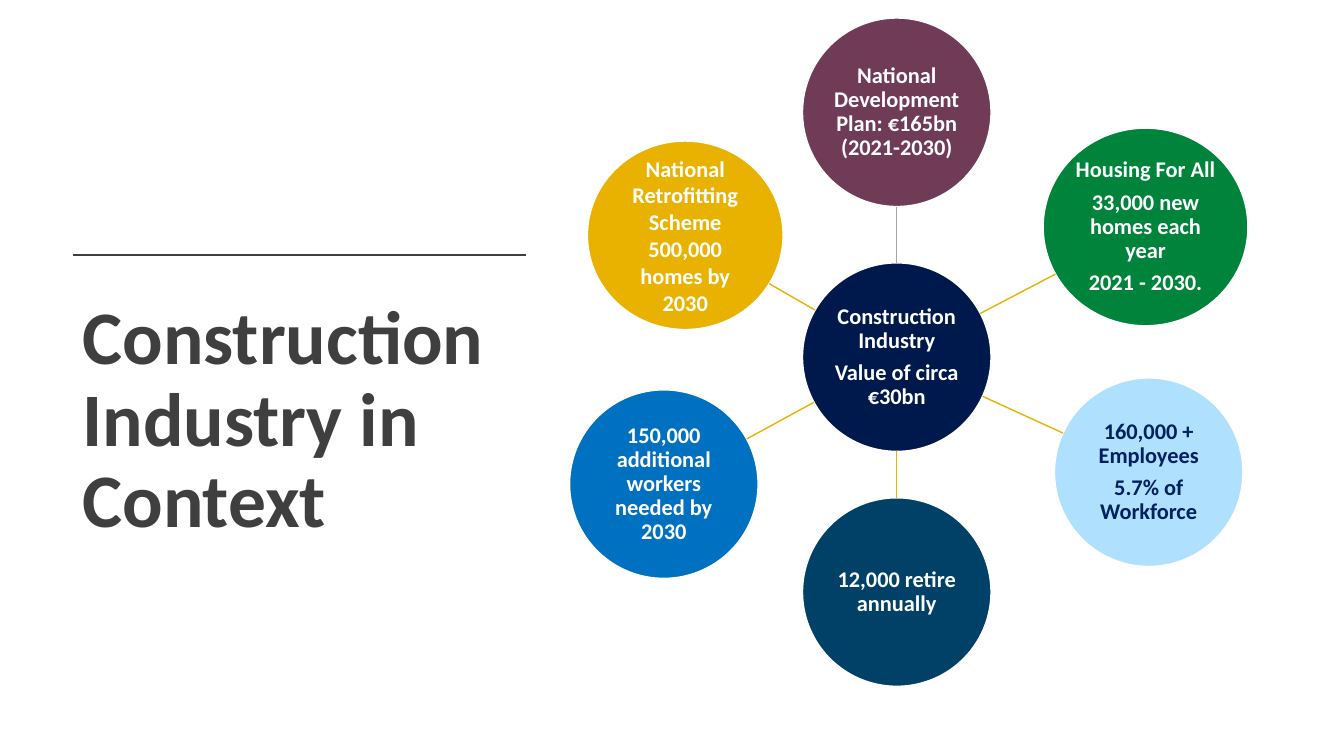
from math import hypot

from lxml.etree import SubElement
from pptx import Presentation
from pptx.dml.color import RGBColor
from pptx.enum.shapes import MSO_CONNECTOR as Link, MSO_SHAPE as Preset
from pptx.enum.text import MSO_ANCHOR as Anchor, PP_ALIGN as Align
from pptx.oxml.ns import qn
from pptx.util import Cm, Pt

WHITE, CHARCOAL, GOLD, GREY = "FFFFFF", "3F3F3F", "EAB200", "A6A6A6"
DIAMETER = 4.75
HUB = (22.6, 9.0)


def color(value):
    return RGBColor.from_string(value)


def write(frame, paragraphs, *, size, ink, align=Align.LEFT, anchor=Anchor.TOP,
          spacing=0.9, after=0, inset=0.25):
    frame.word_wrap = True
    frame.vertical_anchor = anchor
    frame.margin_left = frame.margin_right = Cm(inset)
    frame.margin_top = frame.margin_bottom = Cm(inset / 2)
    for index, text in enumerate(paragraphs):
        para = frame.add_paragraph() if index else frame.paragraphs[0]
        para.alignment = align
        para.line_spacing = spacing
        para.space_after = Pt(after)
        span = para.add_run()
        span.text = text
        span.font.name = "Calibri"
        span.font.size = Pt(size)
        span.font.bold = True
        span.font.color.rgb = color(ink)


def rim(center, size, toward):
    """Point where the ray from center to toward leaves the ellipse."""
    dx, dy = toward[0] - center[0], toward[1] - center[1]
    scale = 1 / hypot(2 * dx / size[0], 2 * dy / size[1])
    return center[0] + dx * scale, center[1] + dy * scale


class Painter:
    def __init__(self, page):
        self.page = page

    def title(self, text, left, top, width, height):
        box = self.page.shapes.add_textbox(Cm(left), Cm(top), Cm(width), Cm(height))
        write(box.text_frame, [text], size=54, ink=CHARCOAL)

    def line(self, start, end, stroke, weight):
        link = self.page.shapes.add_connector(
            Link.STRAIGHT, *(Cm(value) for value in (*start, *end)))
        link.line.color.rgb = color(stroke)
        link.line.width = Pt(weight)
        SubElement(link._element.spPr, qn("a:effectLst"))
        return link

    def circle(self, center, size, fill, paragraphs, ink=WHITE, spacing=0.9, after=5.6):
        width, height = size
        shape = self.page.shapes.add_shape(
            Preset.OVAL, Cm(center[0] - width / 2), Cm(center[1] - height / 2),
            Cm(width), Cm(height))
        shape.shadow.inherit = False
        shape.fill.solid()
        shape.fill.fore_color.rgb = color(fill)
        shape.line.color.rgb = color(WHITE)
        shape.line.width = Pt(1)
        write(shape.text_frame, paragraphs, size=16, ink=ink, align=Align.CENTER,
              anchor=Anchor.MIDDLE, spacing=spacing, after=after, inset=0.03)
        return shape


def main():
    deck = Presentation()
    deck.slide_width, deck.slide_height = Cm(33.87), Cm(19.05)
    painter = Painter(deck.slides.add_slide(deck.slide_layouts[6]))

    # Title with the rule above it
    painter.title("Construction Industry in Context", 1.83, 7.42, 11.13, 6.73)
    painter.line((1.83, 6.43), (13.26, 6.43), CHARCOAL, 1.5)

    # Hub
    round_size = (DIAMETER, DIAMETER)
    hub = painter.circle(HUB, round_size, "00194C",
                         ["Construction Industry", "Value of circa €30bn"])

    # Satellites: center, size, fill, spoke colour and weight, paragraphs, text format
    satellites = [
        ((HUB[0], 2.83), round_size, "703B56", GREY, 0.75,
         ["National Development Plan: €165bn (2021-2030)"], {}),
        ((28.87, 5.72), (5.16, 4.98), "00843B", GOLD, 1,
         ["Housing For All", "33,000 new homes each year", "2021 - 2030."], {}),
        ((28.95, 11.9), round_size, "AFE0FE", GOLD, 1,
         ["160,000 + Employees", "5.7% of Workforce"], {"ink": "002060"}),
        ((HUB[0], 14.92), round_size, "014067", GOLD, 1,
         ["12,000 retire annually"], {}),
        ((16.73, 12.2), round_size, "0070C0", GOLD, 1,
         ["150,000 additional workers needed by 2030"], {}),
        ((17.27, 5.93), (4.93, DIAMETER), GOLD, GOLD, 1,
         ["National Retrofitting Scheme", "500,000 homes by 2030"],
         {"spacing": 1.0, "after": 0}),
    ]
    for center, size, fill, stroke, weight, paragraphs, text_format in satellites:
        satellite = painter.circle(center, size, fill, paragraphs, **text_format)
        spoke = painter.line(rim(HUB, round_size, center), rim(center, size, HUB),
                             stroke, weight)
        # Vertical spokes join the top of the lower circle
        if center[0] == HUB[0]:
            if center[1] < HUB[1]:
                spoke.begin_connect(hub, 0)
            else:
                spoke.end_connect(satellite, 0)

    deck.save("out.pptx")


if __name__ == "__main__":
    main()
